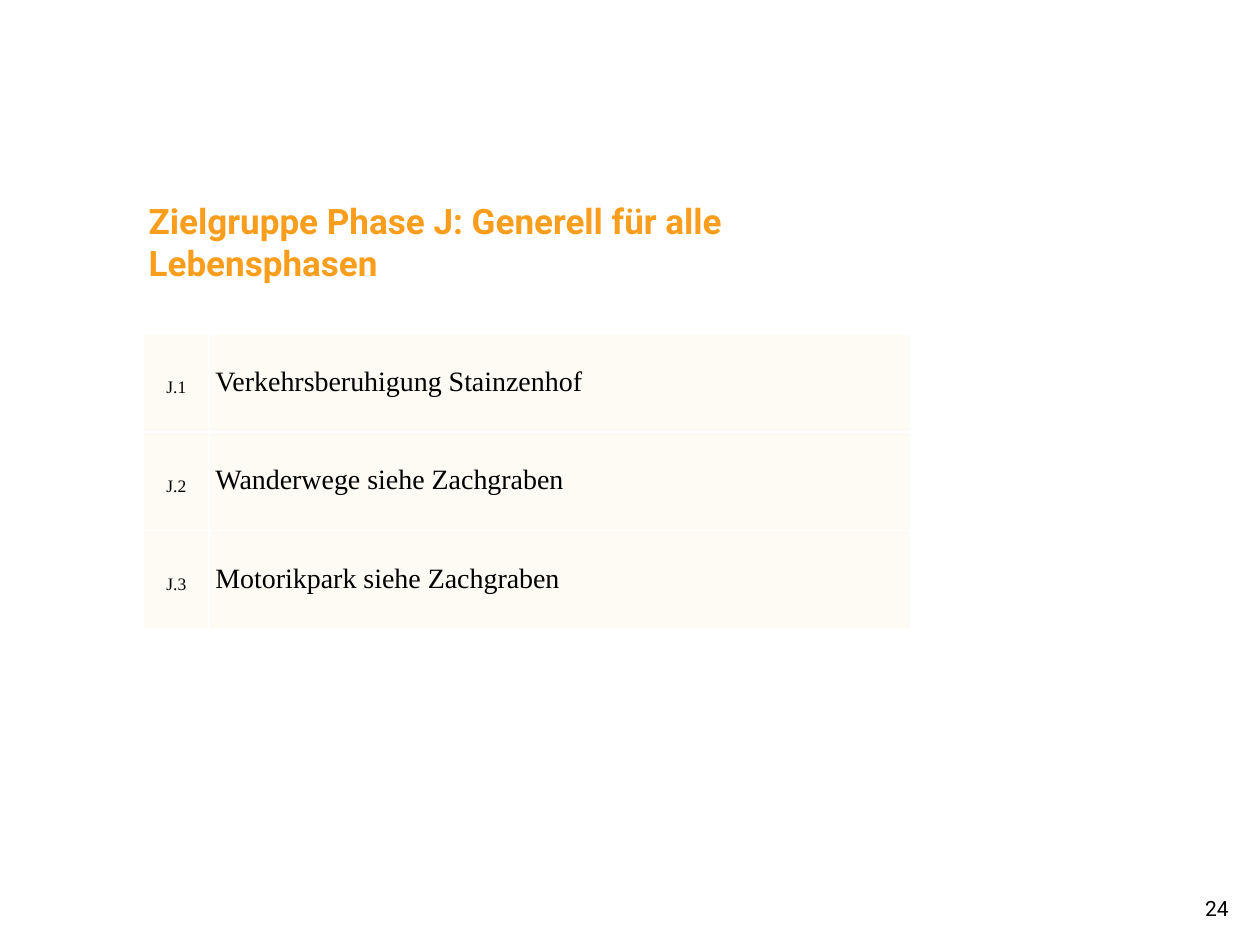
from lxml import etree
from pptx import Presentation
from pptx.dml.color import RGBColor
from pptx.enum.text import MSO_ANCHOR, PP_ALIGN
from pptx.oxml.ns import qn
from pptx.util import Inches, Pt

MIDDLE = MSO_ANCHOR.MIDDLE
LEFT, CENTER, RIGHT = PP_ALIGN.LEFT, PP_ALIGN.CENTER, PP_ALIGN.RIGHT

# Content
TITLE = "Zielgruppe Phase J: Generell für alle Lebensphasen"
MEASURES = [
    ("J.1", "Verkehrsberuhigung Stainzenhof"),
    ("J.2", "Wanderwege siehe Zachgraben"),
    ("J.3", "Motorikpark siehe Zachgraben"),
]
PAGE_NUMBER = "24"

# Look
HEADING_FONT, TABLE_FONT = "Roboto", "Times New Roman"
ORANGE, BLACK, WHITE, CREAM = "F99D1C", "000000", "FFFFFF", "FDFBF4"
COLUMNS = [(0.52, 10, CENTER), (5.57, 16, LEFT)]  # width, text size, alignment
ROW_HEIGHT = 0.78


def color(value):
    return RGBColor.from_string(value)


def write(frame, text, font, size, ink, align=LEFT, bold=False):
    frame.word_wrap = True
    para = frame.paragraphs[0]
    para.alignment = align
    span = para.add_run()
    span.text = text
    span.font.name, span.font.size, span.font.bold = font, Pt(size), bold
    span.font.color.rgb = color(ink)
    return para


def add_borders(cell, ink, width):
    properties = cell._tc.get_or_add_tcPr()
    for index, side in enumerate(("a:lnL", "a:lnR", "a:lnT", "a:lnB")):
        line = etree.Element(qn(side), w=str(Pt(width)))
        fill = etree.SubElement(line, qn("a:solidFill"))
        etree.SubElement(fill, qn("a:srgbClr"), val=ink)
        properties.insert(index, line)


deck = Presentation()
deck.slide_width, deck.slide_height = Inches(10), Inches(7.5)
page = deck.slides.add_slide(deck.slide_layouts[5])

# Title
title = page.shapes.title
title.left, title.top = Inches(1.08), Inches(1.58)
title.width, title.height = Inches(6.58), Inches(0.67)
title.text_frame.vertical_anchor = MIDDLE
write(title.text_frame, TITLE, HEADING_FONT, 20, ORANGE, bold=True)

# Table of measures
table = page.shapes.add_table(
    len(MEASURES), len(COLUMNS), Inches(1.14), Inches(2.65),
    Inches(sum(width for width, _, _ in COLUMNS)),
    Inches(ROW_HEIGHT * len(MEASURES))).table
table.first_row = table.horz_banding = False
for column, (width, _, _) in zip(table.columns, COLUMNS):
    column.width = Inches(width)
for row, measure in enumerate(MEASURES):
    for col, (text, (_, size, align)) in enumerate(zip(measure, COLUMNS)):
        cell = table.cell(row, col)
        cell.margin_left = cell.margin_right = Inches(0.05)
        cell.margin_top = cell.margin_bottom = 0
        cell.vertical_anchor = MIDDLE
        cell.fill.solid()
        cell.fill.fore_color.rgb = color(CREAM)
        add_borders(cell, WHITE, 1)
        para = write(cell.text_frame, text, TABLE_FONT, size, BLACK, align)
        para.line_spacing = Pt(16.8)

# Page number
number = page.shapes.add_textbox(Inches(9.02), Inches(7.06), Inches(0.83), Inches(0.3))
write(number.text_frame, PAGE_NUMBER, HEADING_FONT, 12, BLACK, RIGHT)

deck.save("out.pptx")
